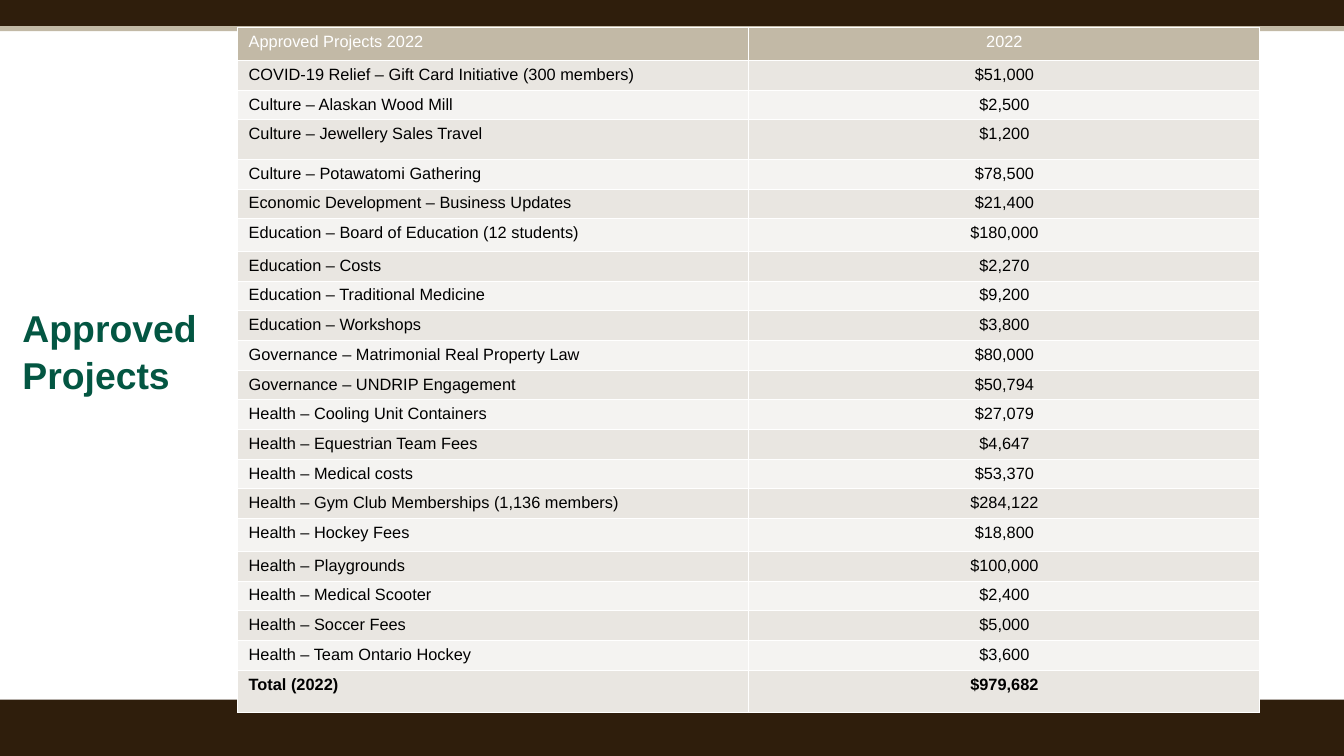
from dataclasses import dataclass

from lxml import etree
from pptx import Presentation
from pptx.dml.color import RGBColor
from pptx.enum.shapes import MSO_SHAPE
from pptx.enum.text import MSO_ANCHOR, PP_ALIGN
from pptx.oxml.ns import qn
from pptx.slide import Slide
from pptx.table import _Cell
from pptx.text.text import _Paragraph
from pptx.util import Inches, Length, Pt

RECTANGLE = MSO_SHAPE.RECTANGLE
MIDDLE, TOP = MSO_ANCHOR.MIDDLE, MSO_ANCHOR.TOP
LEFT, CENTER = PP_ALIGN.LEFT, PP_ALIGN.CENTER

BROWN = RGBColor(0x2F, 0x1E, 0x0C)
TAN = RGBColor(0xC2, 0xB9, 0xA6)
GREEN = RGBColor(0x03, 0x56, 0x42)
WHITE = RGBColor(0xFF, 0xFF, 0xFF)
BLACK = RGBColor(0, 0, 0)
STRIPES = (RGBColor(0xF4, 0xF3, 0xF1), RGBColor(0xE9, 0xE6, 0xE1))

FONT = "Arial"
SLIDE_WIDTH, SLIDE_HEIGHT = Inches(16), Inches(9)

# Row heights, in percent of the slide height
REGULAR, ROOMY, TALL, CLOSING = 3.89, 4.33, 5.22, 5.56


@dataclass(frozen=True)
class Band:
    top: float
    height: float
    color: RGBColor


@dataclass(frozen=True)
class Project:
    name: str
    amount: str
    height: float = REGULAR


BANDS = (
    Band(3.22, 0.89, TAN),
    Band(0, 3.44, BROWN),
    Band(92.56, 7.44, BROWN),
)

PROJECTS = (
    Project("Approved Projects 2022", "2022", ROOMY),
    Project("COVID-19 Relief – Gift Card Initiative (300 members)", "$51,000"),
    Project("Culture – Alaskan Wood Mill", "$2,500"),
    Project("Culture – Jewellery Sales Travel", "$1,200", TALL),
    Project("Culture – Potawatomi Gathering", "$78,500"),
    Project("Economic Development – Business Updates", "$21,400"),
    Project("Education – Board of Education (12 students)", "$180,000", ROOMY),
    Project("Education – Costs", "$2,270"),
    Project("Education – Traditional Medicine", "$9,200"),
    Project("Education – Workshops", "$3,800"),
    Project("Governance – Matrimonial Real Property Law", "$80,000"),
    Project("Governance – UNDRIP Engagement", "$50,794"),
    Project("Health – Cooling Unit Containers", "$27,079"),
    Project("Health – Equestrian Team Fees", "$4,647"),
    Project("Health – Medical costs", "$53,370"),
    Project("Health – Gym Club Memberships (1,136 members)", "$284,122"),
    Project("Health – Hockey Fees", "$18,800", ROOMY),
    Project("Health – Playgrounds", "$100,000"),
    Project("Health – Medical Scooter", "$2,400"),
    Project("Health – Soccer Fees", "$5,000"),
    Project("Health – Team Ontario Hockey", "$3,600"),
    Project("Total (2022)", "$979,682", CLOSING),
)


def across(percent: float) -> Length:
    return Length(round(SLIDE_WIDTH * percent / 100))


def down(percent: float) -> Length:
    return Length(round(SLIDE_HEIGHT * percent / 100))


def add_run(paragraph: _Paragraph, text: str, size: float, color: RGBColor, bold: bool) -> None:
    run = paragraph.add_run()
    run.text = text
    run.font.name = FONT
    run.font.size = Pt(size)
    run.font.bold = bold
    run.font.color.rgb = color


def add_band(slide: Slide, band: Band) -> None:
    bar = slide.shapes.add_shape(RECTANGLE, 0, down(band.top), SLIDE_WIDTH, down(band.height))
    bar.shadow.inherit = False
    bar.fill.solid()
    bar.fill.fore_color.rgb = band.color
    bar.line.fill.background()


def add_title(slide: Slide, lines: tuple[str, ...]) -> None:
    title = slide.shapes.add_textbox(across(1.06), down(38), across(74.38), down(16.67))
    frame = title.text_frame
    frame.word_wrap = True
    frame.vertical_anchor = MIDDLE
    paragraph = frame.paragraphs[0]
    paragraph.line_spacing = 1.05
    for index, line in enumerate(lines):
        if index:
            paragraph.add_line_break()
        add_run(paragraph, line, 32, GREEN, True)


def add_borders(cell: _Cell) -> None:
    properties = cell._tc.get_or_add_tcPr()
    for side in ("a:lnL", "a:lnR", "a:lnT", "a:lnB"):
        edge = etree.SubElement(properties, qn(side), w=str(Pt(1)))
        fill = etree.SubElement(edge, qn("a:solidFill"))
        etree.SubElement(fill, qn("a:srgbClr"), val=str(WHITE))


def fill_cell(cell: _Cell, text: str, align: PP_ALIGN, fill: RGBColor,
              color: RGBColor, bold: bool) -> None:
    add_borders(cell)
    cell.fill.solid()
    cell.fill.fore_color.rgb = fill
    cell.margin_left = cell.margin_right = Inches(0.13)
    cell.margin_top = cell.margin_bottom = Inches(0.06)
    cell.vertical_anchor = TOP
    paragraph = cell.text_frame.paragraphs[0]
    paragraph.alignment = align
    add_run(paragraph, text, 14, color, bold)


def add_projects(slide: Slide, projects: tuple[Project, ...]) -> None:
    height = sum(project.height for project in projects)
    table = slide.shapes.add_table(
        len(projects), 2, across(17.69), down(3.67), across(76.06), down(height)
    ).table
    table.first_row = table.horz_banding = False
    for index, project in enumerate(projects):
        table.rows[index].height = down(project.height)
        is_header = index == 0
        is_total = index == len(projects) - 1
        fill = TAN if is_header else STRIPES[index % 2]
        color = WHITE if is_header else BLACK
        entries = ((project.name, LEFT), (project.amount, CENTER))
        for column, (text, align) in enumerate(entries):
            fill_cell(table.cell(index, column), text, align, fill, color, is_total)


def main() -> None:
    presentation = Presentation()
    presentation.slide_width = SLIDE_WIDTH
    presentation.slide_height = SLIDE_HEIGHT
    slide = presentation.slides.add_slide(presentation.slide_layouts[6])

    # Top and bottom bands
    for band in BANDS:
        add_band(slide, band)

    # Title beside the table of projects
    add_title(slide, ("Approved", "Projects"))
    add_projects(slide, PROJECTS)

    presentation.save("out.pptx")


if __name__ == "__main__":
    main()
